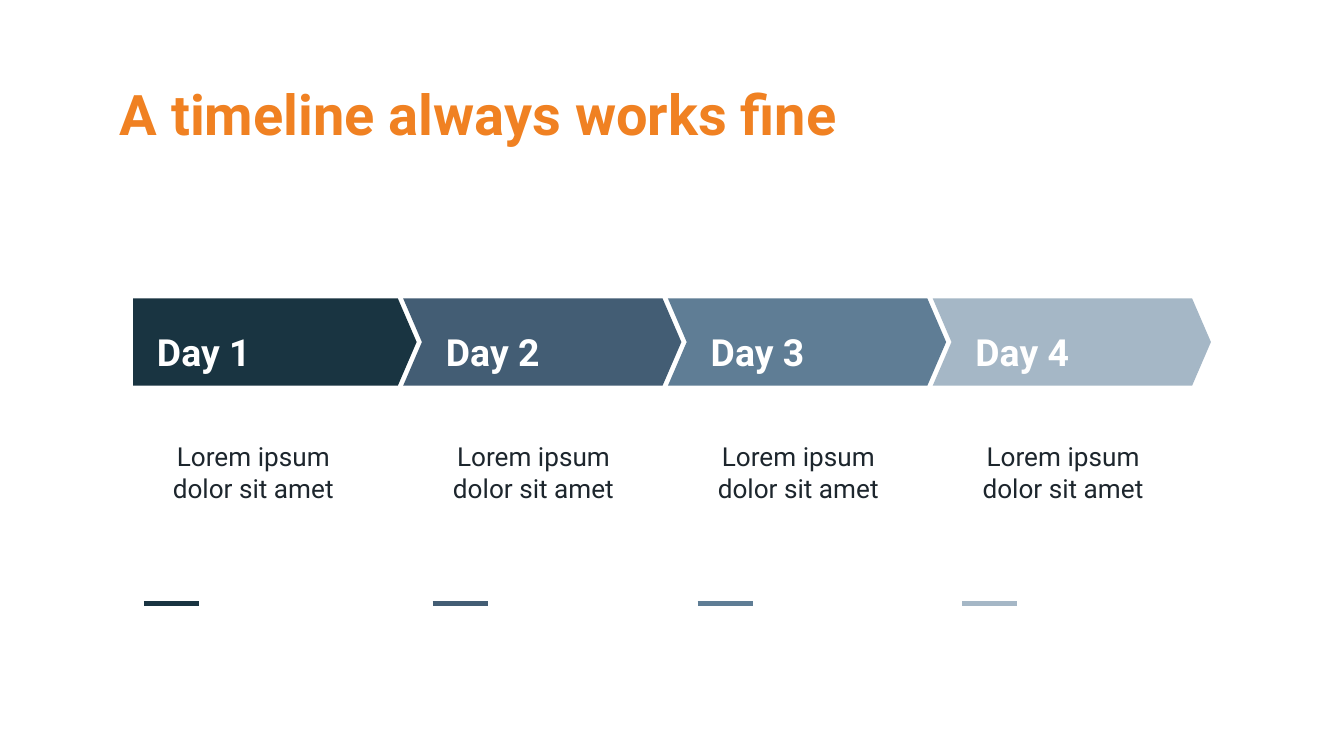
from lxml import etree
from pptx import Presentation
from pptx.dml.color import RGBColor
from pptx.enum import shapes, text
from pptx.oxml.ns import qn
from pptx.util import Inches, Pt

TITLE = "A timeline always works fine"
CAPTION = "Lorem ipsum dolor sit amet"
DAYS = [
    ("Day 1", CAPTION, "193441"),
    ("Day 2", CAPTION, "435D74"),
    ("Day 3", CAPTION, "5F7D95"),
    ("Day 4", CAPTION, "A5B7C6"),
]
LEFT, CENTER = text.PP_ALIGN.LEFT, text.PP_ALIGN.CENTER
THEME = {
    "font": "Roboto",
    "title": {"size": Pt(30), "bold": True, "color": "F08122"},
    "day": {"size": Pt(20), "bold": True, "color": "FFFFFF"},
    "caption": {"size": Pt(14), "bold": False, "color": "1D262D"},
    "rule": Pt(3),
}
SLIDE_WIDTH = Inches(10)
SLIDE_HEIGHT = SLIDE_WIDTH * 9 // 16
BAND_TOP, BAND_HEIGHT = 2.22, 0.65
FIRST_LEFT, SECOND_LEFT, PITCH = 0.99, 3, 1.97
BAND_GAP, TIP = 0.04, 0.14
RULE_TOP, RULE_WIDTH = 4.49, 0.41


def write(box, words, style, align=LEFT, spacing=1.0):
    frame = box.text_frame
    frame.text = words
    frame_format = {
        "word_wrap": True,
        "auto_size": text.MSO_AUTO_SIZE.NONE,
        "vertical_anchor": text.MSO_ANCHOR.TOP,
        **{f"margin_{side}": Inches(0.1) for side in ("left", "top", "right", "bottom")},
    }
    for name, value in frame_format.items():
        setattr(frame, name, value)
    paragraph = frame.paragraphs[0]
    paragraph.alignment = align
    paragraph.line_spacing = spacing
    font_format = {"name": THEME["font"], "size": style["size"], "bold": style["bold"]}
    for name, value in font_format.items():
        setattr(paragraph.font, name, value)
    paragraph.font.color.rgb = RGBColor.from_string(style["color"])


def add_text(slide, at, *content, **layout):
    write(slide.shapes.add_textbox(*map(Inches, at)), *content, **layout)


def add_band(slide, left, shoulder, color, notched):
    middle, bottom = BAND_TOP + BAND_HEIGHT / 2, BAND_TOP + BAND_HEIGHT
    outline = [(left, bottom), (shoulder, bottom), (shoulder + TIP, middle), (shoulder, BAND_TOP)]
    if notched:
        outline.insert(0, (left + TIP, middle))
    builder = slide.shapes.build_freeform(Inches(left), Inches(BAND_TOP))
    builder.add_line_segments([(Inches(x), Inches(y)) for x, y in outline])
    band = builder.convert_to_shape()
    band.shadow.inherit = False
    band.fill.solid()
    band.fill.fore_color.rgb = RGBColor.from_string(color)
    band.line.fill.background()


def add_rule(slide, left, color):
    ends = (left, RULE_TOP, left + RULE_WIDTH, RULE_TOP)
    rule = slide.shapes.add_connector(shapes.MSO_CONNECTOR.STRAIGHT, *map(Inches, ends))
    rule.line.width = THEME["rule"]
    rule.line.color.rgb = RGBColor.from_string(color)
    etree.SubElement(rule._element.spPr, qn("a:effectLst"))


def main():
    deck = Presentation()
    deck.slide_width, deck.slide_height = SLIDE_WIDTH, SLIDE_HEIGHT
    slide = deck.slides.add_slide(deck.slide_layouts[5])
    title = slide.shapes.title
    title.left, title.top, title.width, title.height = map(Inches, (0.79, 0.49, 8.43, 0.63))
    write(title, TITLE, THEME["title"])

    for index, (day, caption, color) in enumerate(DAYS):
        is_first = index == 0
        left = FIRST_LEFT if is_first else SECOND_LEFT + (index - 1) * PITCH
        shoulder = SECOND_LEFT + index * PITCH - BAND_GAP
        day_left = left + (0.08 if is_first else 0.22)
        caption_left, caption_width = (left, 1.79) if is_first else (left + 0.1, 1.74)
        add_band(slide, left, shoulder, color, not is_first)
        add_text(slide, (day_left, 2.3, 1.5, 0.49), day, THEME["day"], spacing=1.14)
        add_text(slide, (caption_left, 3.18, caption_width, 0.96), caption,
                 THEME["caption"], align=CENTER)
        add_rule(slide, day_left, color)

    deck.save("out.pptx")


if __name__ == "__main__":
    main()
